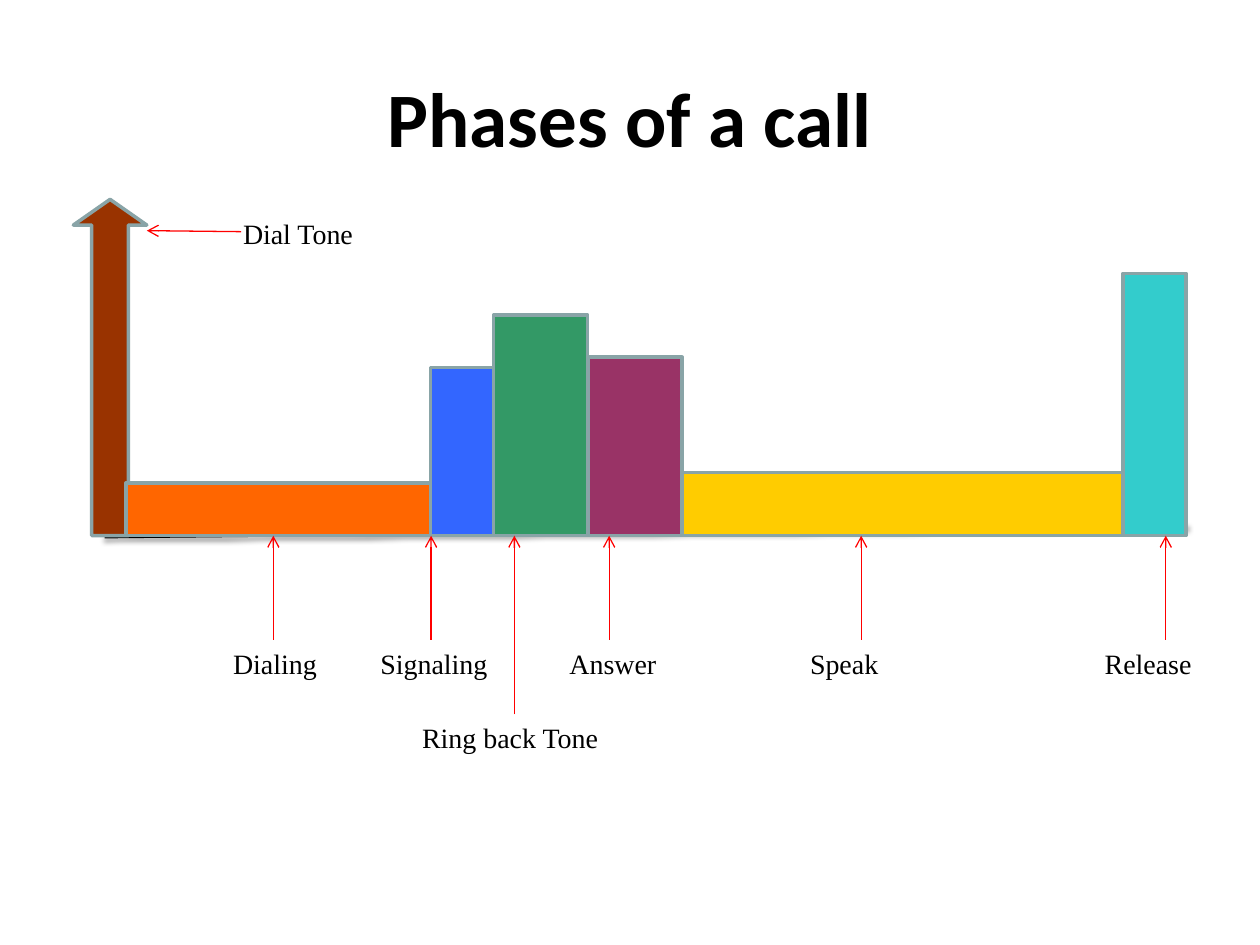
from lxml.etree import SubElement
from pptx import Presentation
from pptx.dml.color import RGBColor
from pptx.enum.shapes import MSO_CONNECTOR, MSO_SHAPE
from pptx.enum.text import MSO_ANCHOR, MSO_AUTO_SIZE, PP_ALIGN
from pptx.oxml.ns import qn
from pptx.util import Cm, Pt

BASE = 10.8
ROW_1, ROW_2 = 12.9, 14.4

BARS = [
    (6.14, 1.06, "FF6600"),
    (1.27, 3.39, "3366FF"),
    (1.9, 4.45, "339966"),
    (1.9, 3.6, "993366"),
    (8.89, 1.27, "FFCC00"),
    (1.27, 5.29, "33CCCC"),
]

LABELS = [
    ("Dialing", 4.45, 2.21, 5.51, ROW_1),
    ("Signaling", 7.42, 2.69, 8.69, ROW_1),
    ("Ring back Tone", 8.26, 4.11, 10.37, ROW_2),
    ("Answer", 11.23, 2.26, 12.28, ROW_1),
    ("Speak", 16.08, 1.88, 17.36, ROW_1),
    ("Release", 22.02, 2.26, 23.5, ROW_1),
]


def color(value):
    return RGBColor.from_string(value)


def add_text(slide, text, x, y, w, h, font, size):
    sp = slide.shapes.add_textbox(Cm(x), Cm(y), Cm(w), Cm(h))
    tf = sp.text_frame
    p = tf.paragraphs[0]
    p.text = text
    p.font.name = font
    p.font.size = Pt(size)
    p.font.color.rgb = color("000000")
    return tf


def add_title(slide, text):
    tf = add_text(slide, text, 1.27, 0.76, 22.86, 3.18, "Calibri", 44)
    tf.word_wrap = True
    tf.vertical_anchor = MSO_ANCHOR.MIDDLE
    tf.paragraphs[0].alignment = PP_ALIGN.CENTER
    tf.paragraphs[0].font.bold = True


def add_label(slide, text, x, y, w):
    tf = add_text(slide, text, x, y, w, 0.94, "Times New Roman", 16)
    tf.word_wrap = False
    tf.auto_size = MSO_AUTO_SIZE.SHAPE_TO_FIT_TEXT


def add_block(slide, kind, x, w, h, fill):
    sp = slide.shapes.add_shape(kind, Cm(x), Cm(BASE - h), Cm(w), Cm(h))
    sp.shadow.inherit = False
    sp.fill.solid()
    sp.fill.fore_color.rgb = color(fill)
    sp.line.color.rgb = color("89A4A7")
    sp.line.width = Pt(2)
    return sp


def add_line(slide, x1, y1, x2, y2, stroke, width):
    line = slide.shapes.add_connector(
        MSO_CONNECTOR.STRAIGHT, Cm(x1), Cm(y1), Cm(x2), Cm(y2))
    line.line.color.rgb = color(stroke)
    line.line.width = Pt(width)
    effects = SubElement(line._element.spPr, qn("a:effectLst"))
    return line, effects


def add_arrow(slide, x1, y1, x2, y2):
    line, _ = add_line(slide, x1, y1, x2, y2, "FF0000", 0.75)
    SubElement(line.line._get_or_add_ln(), qn("a:tailEnd"), type="arrow")


def add_baseline(slide):
    _, effects = add_line(slide, 2.11, BASE, 23.93, 10.59, "000000", 3)
    shadow = SubElement(effects, qn("a:outerShdw"), blurRad=str(Pt(3.1)),
                        dist=str(Pt(1.8)), dir="5400000", rotWithShape="0")
    tint = SubElement(shadow, qn("a:srgbClr"), val="000000")
    SubElement(tint, qn("a:alpha"), val="35000")


def main():
    prs = Presentation()
    prs.slide_width, prs.slide_height = Cm(25.4), Cm(19.05)
    s = prs.slides.add_slide(prs.slide_layouts[6])

    add_title(s, "Phases of a call")
    add_baseline(s)
    tone = add_block(s, MSO_SHAPE.UP_ARROW, 1.48, 1.48, 6.78, "993300")
    tone.adjustments[1] = 0.35

    x = 2.54
    for w, h, fill in BARS:
        add_block(s, MSO_SHAPE.RECTANGLE, x, w, h, fill)
        x += w

    add_arrow(s, 4.86, 4.67, 2.96, 4.65)
    add_label(s, "Dial Tone", 4.65, 4.24, 2.79)
    for text, left, w, tip, row in LABELS:
        add_arrow(s, tip, row, tip, BASE)
        add_label(s, text, left, row, w)

    prs.save("out.pptx")


if __name__ == "__main__":
    main()
